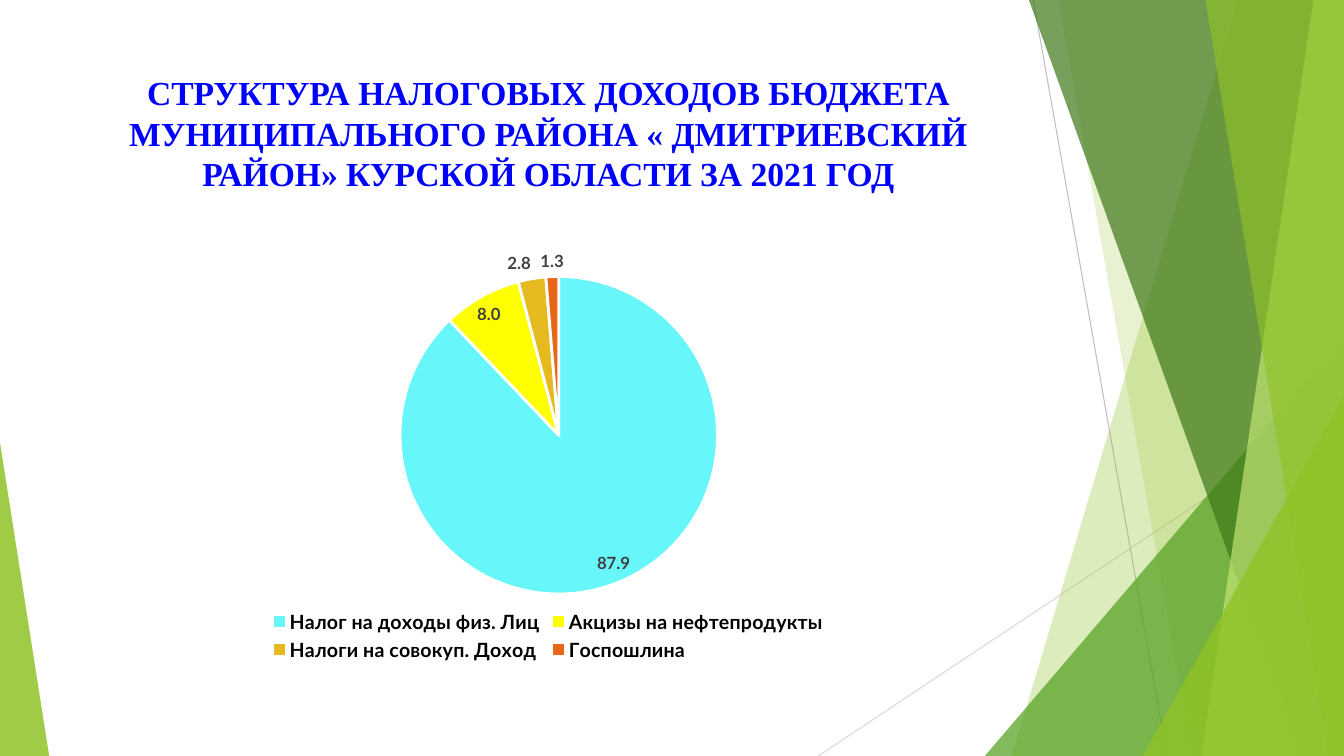
from lxml.etree import SubElement
from pptx import Presentation
from pptx.chart.data import CategoryChartData
from pptx.dml.color import RGBColor
from pptx.enum.chart import XL_CHART_TYPE, XL_LABEL_POSITION, XL_LEGEND_POSITION
from pptx.enum.shapes import MSO_CONNECTOR, MSO_SHAPE
from pptx.enum.text import MSO_ANCHOR, PP_ALIGN
from pptx.oxml import parse_xml
from pptx.oxml.ns import nsdecls, qn
from pptx.util import Cm, Pt

TITLE = ("СТРУКТУРА НАЛОГОВЫХ ДОХОДОВ БЮДЖЕТА МУНИЦИПАЛЬНОГО РАЙОНА « ДМИТРИЕВСКИЙ РАЙОН» "
         "КУРСКОЙ ОБЛАСТИ ЗА 2021 ГОД")
TAXES = [
    ("Налог на доходы физ. Лиц", 87.9, "cyan"),
    ("Акцизы на нефтепродукты", 8.0, "yellow"),
    ("Налоги на совокуп. Доход", 2.8, "gold"),
    ("Госпошлина", 1.3, "orange"),
]
COLOURS = {
    "cyan": "67F6F9", "yellow": "FFFF00", "gold": "E6B91E", "orange": "E76618",
    "title": "0000FF", "label": "404040", "legend": "000000", "white": "FFFFFF",
    "steep": "BFBFBF", "shallow": "D9D9D9",
    "lime": "90C226", "green": "54A021", "forest": "3F7819", "pale": "C0E474",
}
WIDTH, HEIGHT = 33.87, 19.05
RAYS = [
    ((26.04, 0), (29.41, HEIGHT), "steep"),
    ((WIDTH, 10.24), (20.62, HEIGHT), "shallow"),
]
BACK_SHARDS = [(31.19, 25.5, "lime", 30), (26.67, 30.05, "lime", 20)]
FRONT_SHARDS = [(25.93, 32.79, "forest", 70), (33.1, 30.28, "pale", 70), (30.38, 33.48, "lime", 65)]
BACK_WEDGE = (24.82, 8.46, 9.05, 1, "green", 72)
FRONT_WEDGES = [(28.8, 9.98, 5.07, 1, "lime", 80), (0, 11.15, 1.24, 0, "lime", 85)]
PLOT_AREA = {"x": 0.087, "y": 0.09, "w": 0.848, "h": 0.743}
LEFT, CONTENT_WIDTH = 1.88, 23.88


def rgb(name):
    return RGBColor.from_string(COLOURS[name])


def tint(facet, colour, opacity):
    facet.shadow.inherit = False
    facet.fill.solid()
    facet.fill.fore_color.rgb = rgb(colour)
    facet.line.fill.background()
    fill_colour = facet.fill._xPr.find(qn("a:solidFill"))[0]
    SubElement(fill_colour, qn("a:alpha"), val=str(opacity * 1000))


def add_ray(shapes, start, end, colour):
    ray = shapes.add_connector(MSO_CONNECTOR.STRAIGHT, *map(Cm, start + end))
    ray.line.color.rgb = rgb(colour)
    ray.line.width = Pt(0.75)
    SubElement(ray._element.spPr, qn("a:effectLst"))


def add_shard(shapes, top_left, bottom_left, colour, opacity):
    builder = shapes.build_freeform(Cm(top_left), Cm(0))
    corners = [(WIDTH, 0), (WIDTH, HEIGHT), (bottom_left, HEIGHT)]
    builder.add_line_segments([(Cm(x), Cm(y)) for x, y in corners], close=True)
    tint(builder.convert_to_shape(), colour, opacity)


def add_wedge(shapes, left, top, width, apex, colour, opacity):
    wedge = shapes.add_shape(MSO_SHAPE.ISOSCELES_TRIANGLE,
                             Cm(left), Cm(top), Cm(width), Cm(HEIGHT - top))
    wedge.adjustments[0] = apex
    tint(wedge, colour, opacity)


def add_backdrop(shapes):
    for ray in RAYS:
        add_ray(shapes, *ray)
    for shard in BACK_SHARDS:
        add_shard(shapes, *shard)
    add_wedge(shapes, *BACK_WEDGE)
    for shard in FRONT_SHARDS:
        add_shard(shapes, *shard)
    for wedge in FRONT_WEDGES:
        add_wedge(shapes, *wedge)


def style(font, size, colour, face="Lato"):
    font.name, font.size, font.bold = face, Pt(size), True
    font.color.rgb = rgb(colour)


def add_title(shapes):
    frame = shapes.add_textbox(Cm(LEFT), Cm(1.7), Cm(CONTENT_WIDTH), Cm(3.66)).text_frame
    frame.word_wrap = True
    frame.vertical_anchor = MSO_ANCHOR.TOP
    heading = frame.paragraphs[0]
    heading.text = TITLE
    heading.alignment = PP_ALIGN.CENTER
    style(heading.font, 24, "title", "Times New Roman")


def add_pie(shapes):
    shares = CategoryChartData(number_format="0.0")
    shares.categories = [tax for tax, _, _ in TAXES]
    shares.add_series("Series 1", [share for _, share, _ in TAXES])
    chart = shapes.add_chart(XL_CHART_TYPE.PIE, Cm(LEFT), Cm(6), Cm(CONTENT_WIDTH), Cm(10.77),
                             shares).chart
    chart.has_title = False
    chart.font.name, chart.font.size = "Lato", Pt(10)
    chart.has_legend = True
    chart.legend.position = XL_LEGEND_POSITION.BOTTOM
    chart.legend.include_in_layout = False
    style(chart.legend.font, 14, "legend")

    pie = chart.plots[0]
    pie.vary_by_categories = True
    for index, (_, _, colour) in enumerate(TAXES):
        slice_format = pie.series[0].points[index].format
        slice_format.fill.solid()
        slice_format.fill.fore_color.rgb = rgb(colour)
        slice_format.line.color.rgb = rgb("white")
        slice_format.line.width = Pt(2)
    labels = pie.series[0].data_labels
    labels.show_value = True
    labels.number_format, labels.number_format_is_linked = "0.0", False
    labels.position = XL_LABEL_POSITION.BEST_FIT
    style(labels.font, 12, "label")

    plot_area = chart._chartSpace.chart.plotArea
    for automatic in plot_area.findall(qn("c:layout")):
        plot_area.remove(automatic)
    sizes = "".join(f'<c:{side} val="{part}"/>' for side, part in PLOT_AREA.items())
    plot_area.insert(0, parse_xml(
        f'<c:layout {nsdecls("c")}><c:manualLayout><c:layoutTarget val="inner"/>'
        f'<c:xMode val="edge"/><c:yMode val="edge"/>{sizes}</c:manualLayout></c:layout>'))


def main():
    """Build the slide on the structure of tax revenue."""
    deck = Presentation()
    deck.slide_width, deck.slide_height = Cm(WIDTH), Cm(HEIGHT)
    shapes = deck.slides.add_slide(deck.slide_layouts[6]).shapes
    add_backdrop(shapes)
    add_title(shapes)
    add_pie(shapes)
    deck.save("out.pptx")


if __name__ == "__main__":
    main()
